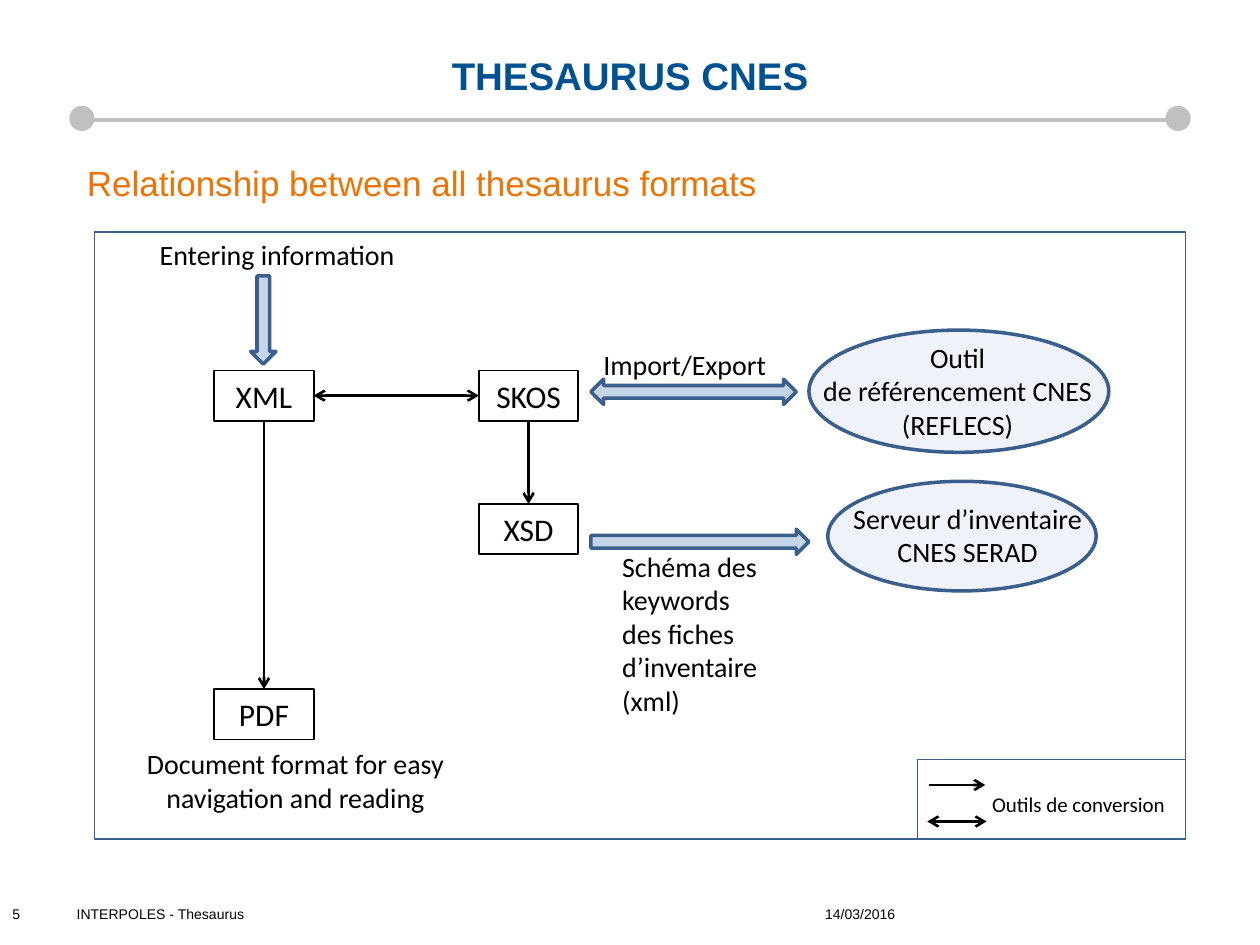
"""Build the slide on the relationship between the thesaurus formats."""
from lxml import etree
from pptx import Presentation
from pptx.dml.color import RGBColor
from pptx.enum.shapes import MSO_CONNECTOR, MSO_SHAPE
from pptx.enum.text import MSO_ANCHOR, PP_ALIGN
from pptx.oxml.ns import qn
from pptx.util import Inches, Pt

LEFT, CENTER = PP_ALIGN.LEFT, PP_ALIGN.CENTER
TOP, MIDDLE = MSO_ANCHOR.TOP, MSO_ANCHOR.MIDDLE
RECTANGLE, OVAL = MSO_SHAPE.RECTANGLE, MSO_SHAPE.OVAL
STRAIGHT = MSO_CONNECTOR.STRAIGHT
SIDE_LEFT, SIDE_BOTTOM, SIDE_RIGHT, SIDE_TOP = 1, 2, 3, 0

BLACK, GREY, NAVY, ORANGE = "000000", "C0C0C0", "005191", "EC7305"
BLUE, OUTLINE = "4F81BD", "3A5F8C"

FORMAT_SIZE = (0.79, 0.4)
FORMATS = {"XML": (1.7, 2.94), "SKOS": (3.8, 2.94), "XSD": (3.8, 4), "PDF": (1.7, 5.47)}
CONVERSIONS = [
    ("XML", SIDE_RIGHT, "SKOS", SIDE_LEFT, True),
    ("SKOS", SIDE_BOTTOM, "XSD", SIDE_TOP, False),
    ("XML", SIDE_BOTTOM, "PDF", SIDE_TOP, False),
]
FLOWS = [
    (OVAL, (6.42, 2.62, 2.38, 0.97), 9),
    (OVAL, (6.57, 3.82, 2.13, 0.87), 9),
    (MSO_SHAPE.LEFT_RIGHT_ARROW, (4.69, 3.01, 1.63, 0.2), 33),
    (MSO_SHAPE.RIGHT_ARROW, (4.69, 4.2, 1.73, 0.2), 32),
    (MSO_SHAPE.DOWN_ARROW, (1.99, 2.19, 0.2, 0.7), 32),
]
FRAMES = [((0.75, 1.84, 8.66, 4.82), 0.75), ((7.28, 6.03, 2.13, 0.63), 0.5)]
LEGEND = [(7.37, 7.82, 6.23, False), (7.36, 7.83, 6.52, True)]
LABELS = [
    ("Outil\nde référencement CNES\n(REFLECS)", (6.3, 2.65, 2.6, 0.91), CENTER),
    ("Serveur d’inventaire CNES SERAD", (6.58, 3.93, 2.2, 0.64), CENTER),
    ("Import/Export", (4.69, 2.71, 1.73, 0.37), LEFT),
    ("Schéma des keywords des fiches d’inventaire (xml)", (4.84, 4.31, 1.34, 1.45), LEFT),
    ("Entering information", (0.98, 1.84, 2.44, 0.37), CENTER),
    ("Document format for easy navigation and reading", (0.74, 5.88, 3.21, 0.64), CENTER),
]
FOOTER = [("5", 0, 0.47), ("INTERPOLES - Thesaurus", 0.51, 5.91), ("14/03/2016", 6.45, 2.33)]


def color(value):
    return RGBColor.from_string(value)


def write(box, text, size=16, font="Calibri", ink=BLACK, bold=False, align=LEFT, anchor=TOP):
    frame = box.text_frame
    frame.word_wrap = True
    frame.vertical_anchor = anchor
    for index, line in enumerate(text.split("\n")):
        para = frame.paragraphs[0] if index == 0 else frame.add_paragraph()
        para.alignment = align
        span = para.add_run()
        span.text = line
        span.font.size = Pt(size)
        span.font.name = font
        span.font.bold = bold
        span.font.color.rgb = color(ink)


def add_text(page, text, place, **style):
    box = page.shapes.add_textbox(*map(Inches, place))
    write(box, text, **style)


def add_shape(page, kind, place, fill=None, alpha=100, line=None, width=1):
    shape = page.shapes.add_shape(kind, *map(Inches, place))
    shape.shadow.inherit = False
    if fill:
        shape.fill.solid()
        shape.fill.fore_color.rgb = color(fill)
        if alpha < 100:
            tint = shape.fill._xPr.find(qn("a:solidFill"))[0]
            etree.SubElement(tint, qn("a:alpha")).set("val", str(alpha * 1000))
    else:
        shape.fill.background()
    if line:
        shape.line.color.rgb = color(line)
        shape.line.width = Pt(width)
    else:
        shape.line.fill.background()
    return shape


def add_line(page, start=(0, 0), end=(0, 0), ink=BLACK, width=1.5, arrows=()):
    connector = page.shapes.add_connector(STRAIGHT, *map(Inches, (*start, *end)))
    connector.line.color.rgb = color(ink)
    connector.line.width = Pt(width)
    outline = connector.line._get_or_add_ln()
    for arrow in arrows:
        etree.SubElement(outline, qn(f"a:{arrow}")).set("type", "arrow")
    etree.SubElement(connector._element.spPr, qn("a:effectLst"))
    return connector


def arrow_ends(both):
    return ("headEnd", "tailEnd") if both else ("tailEnd",)


def add_heading(page):
    add_line(page, (0.59, 0.95), (9.41, 0.95), ink=GREY, width=2.5)
    for left in (0.55, 9.25):
        add_shape(page, OVAL, (left, 0.84, 0.2, 0.2), fill=GREY)
    add_text(page, "THESAURUS CNES", (0.59, 0.2, 8.82, 0.79), size=22, font="Arial",
             ink=NAVY, bold=True, align=CENTER, anchor=MIDDLE)
    add_text(page, "Relationship between all thesaurus formats", (0.59, 1.23, 8.82, 0.5),
             size=20, font="Arial", ink=ORANGE)


def add_diagram(page):
    for place, width in FRAMES:
        add_shape(page, RECTANGLE, place, line=OUTLINE, width=width)
    boxes = {}
    for name, corner in FORMATS.items():
        boxes[name] = add_shape(page, RECTANGLE, (*corner, *FORMAT_SIZE), line=BLACK)
        write(boxes[name], name, size=18, align=CENTER, anchor=MIDDLE)
    for source, source_side, target, target_side, both in CONVERSIONS:
        connector = add_line(page, arrows=arrow_ends(both))
        connector.begin_connect(boxes[source], source_side)
        connector.end_connect(boxes[target], target_side)
    for kind, place, alpha in FLOWS:
        add_shape(page, kind, place, fill=BLUE, alpha=alpha, line=OUTLINE, width=2)
    for text, place, align in LABELS:
        add_text(page, text, place, align=align)


def add_legend(page):
    for left, right, top, both in LEGEND:
        add_line(page, (left, top), (right, top), arrows=arrow_ends(both))
    add_text(page, "Outils de conversion", (7.68, 6.23, 1.76, 0.3), size=12, align=CENTER)


def main():
    deck = Presentation()
    deck.slide_width, deck.slide_height = Inches(10), Inches(7.5)
    page = deck.slides.add_slide(deck.slide_layouts[6])
    add_heading(page)
    add_diagram(page)
    add_legend(page)
    for text, left, width in FOOTER:
        add_text(page, text, (left, 7.14, width, 0.24), size=8, font="Arial")
    deck.save("out.pptx")


if __name__ == "__main__":
    main()
